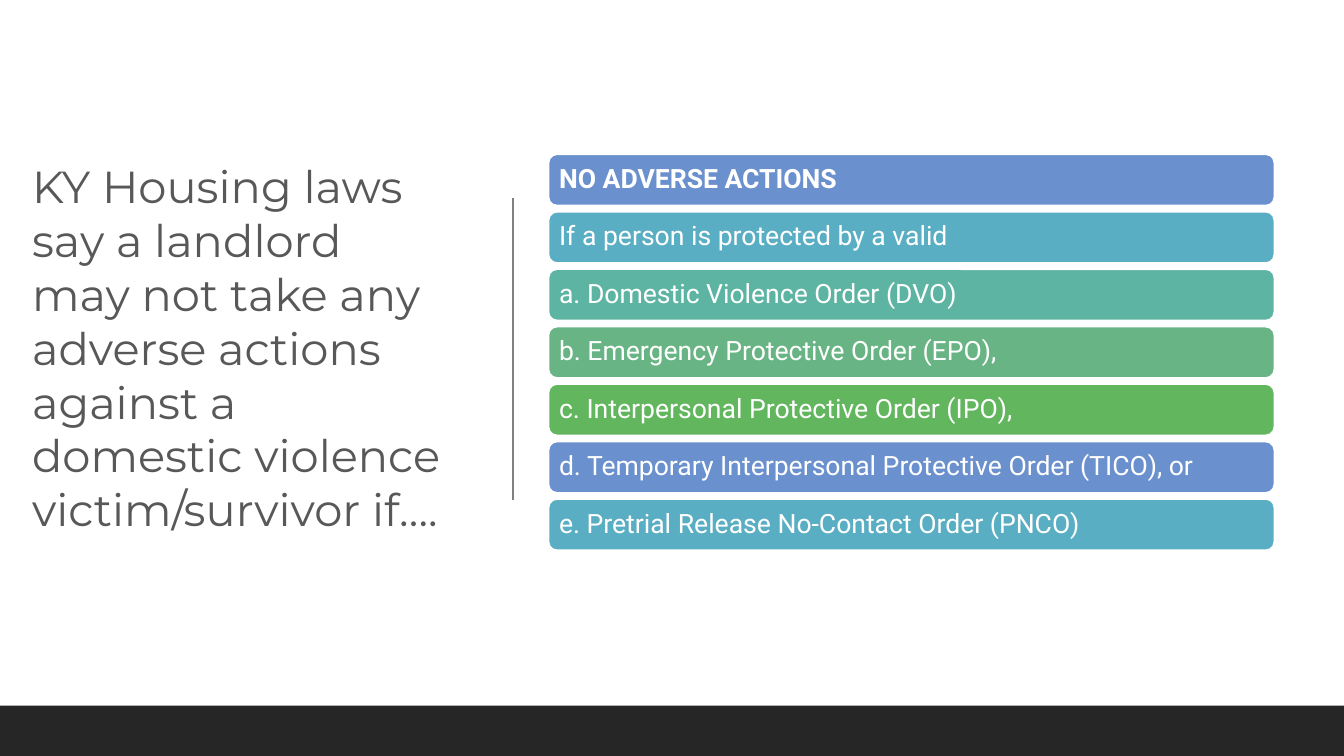
from pptx import Presentation
from pptx.dml.color import RGBColor
from pptx.enum.shapes import MSO_CONNECTOR, MSO_SHAPE
from pptx.enum.text import MSO_ANCHOR, PP_ALIGN
from pptx.oxml.ns import qn
from pptx.util import Inches, Pt
from lxml.etree import SubElement

WHITE = RGBColor(0xFF, 0xFF, 0xFF)
CHARCOAL = RGBColor(0x26, 0x26, 0x26)
GRAY = RGBColor(0x80, 0x80, 0x80)
TITLE_GRAY = RGBColor(0x58, 0x58, 0x58)
BLUE = RGBColor(0x6A, 0x90, 0xCE)
TEAL = RGBColor(0x5A, 0xAE, 0xC3)
SEA_GREEN = RGBColor(0x5D, 0xB4, 0xA2)
SAGE = RGBColor(0x68, 0xB4, 0x84)
GREEN = RGBColor(0x62, 0xB6, 0x5E)
BAR_COLORS = [BLUE, TEAL, SEA_GREEN, SAGE, GREEN]

TITLE = (
    "KY Housing laws say a landlord may not take any adverse actions "
    "against a domestic violence victim/survivor if…."
)
ORDERS = [
    "NO ADVERSE ACTIONS",
    "If a person is protected by a valid",
    "a. Domestic Violence Order (DVO)",
    "b. Emergency Protective Order (EPO),",
    "c. Interpersonal Protective Order (IPO),",
    "d. Temporary Interpersonal Protective Order (TICO), or",
    "e. Pretrial Release No-Contact Order (PNCO)",
]


def format_font(paragraph, name, size, color, bold=False):
    for run in paragraph.runs:
        run.font.name = name
        run.font.size = Pt(size)
        run.font.color.rgb = color
        run.font.bold = bold


def add_footer(slide, left, top, width, height):
    footer = slide.shapes.add_shape(
        MSO_SHAPE.RECTANGLE, Inches(left), Inches(top), Inches(width), Inches(height)
    )
    footer.shadow.inherit = False
    footer.fill.solid()
    footer.fill.fore_color.rgb = CHARCOAL
    footer.line.fill.background()


def add_divider(slide, left, top, height):
    divider = slide.shapes.add_connector(
        MSO_CONNECTOR.STRAIGHT,
        Inches(left), Inches(top), Inches(left), Inches(top + height),
    )
    divider.line.color.rgb = GRAY
    divider.line.width = Pt(1)
    SubElement(divider._element.spPr, qn("a:effectLst"))


def add_title(slide, left, top, width, height):
    title = slide.shapes.add_textbox(
        Inches(left), Inches(top), Inches(width), Inches(height)
    )
    text_frame = title.text_frame
    text_frame.word_wrap = True
    text_frame.text = TITLE
    format_font(text_frame.paragraphs[0], "Montserrat", 32, TITLE_GRAY)


def add_order_bars(slide, left, top, width, height):
    bar_height = 0.51
    pitch = (height - bar_height) / (len(ORDERS) - 1)
    for index, order in enumerate(ORDERS):
        bar = slide.shapes.add_shape(
            MSO_SHAPE.ROUNDED_RECTANGLE,
            Inches(left), Inches(top + index * pitch),
            Inches(width), Inches(bar_height),
        )
        bar.shadow.inherit = False
        bar.fill.solid()
        bar.fill.fore_color.rgb = BAR_COLORS[index % len(BAR_COLORS)]
        bar.line.color.rgb = WHITE
        bar.line.width = Pt(1.25)
        text_frame = bar.text_frame
        text_frame.word_wrap = True
        text_frame.vertical_anchor = MSO_ANCHOR.MIDDLE
        text_frame.margin_left = text_frame.margin_right = Inches(0.08)
        text_frame.text = order
        paragraph = text_frame.paragraphs[0]
        paragraph.alignment = PP_ALIGN.LEFT
        paragraph.line_spacing = 0.9
        format_font(paragraph, "Roboto", 19, WHITE, bold=index == 0)


def main():
    presentation = Presentation()
    presentation.slide_width = Inches(13.33)
    presentation.slide_height = Inches(7.5)
    slide = presentation.slides.add_slide(presentation.slide_layouts[6])
    slide.background.fill.solid()
    slide.background.fill.fore_color.rgb = WHITE
    add_divider(slide, 5.09, 1.96, 3)
    add_footer(slide, 0, 7, 13.33, 0.5)
    add_order_bars(slide, 5.44, 1.53, 7.2, 3.93)
    add_title(slide, 0.22, 1.53, 4.3, 3.87)
    presentation.save("out.pptx")


if __name__ == "__main__":
    main()
